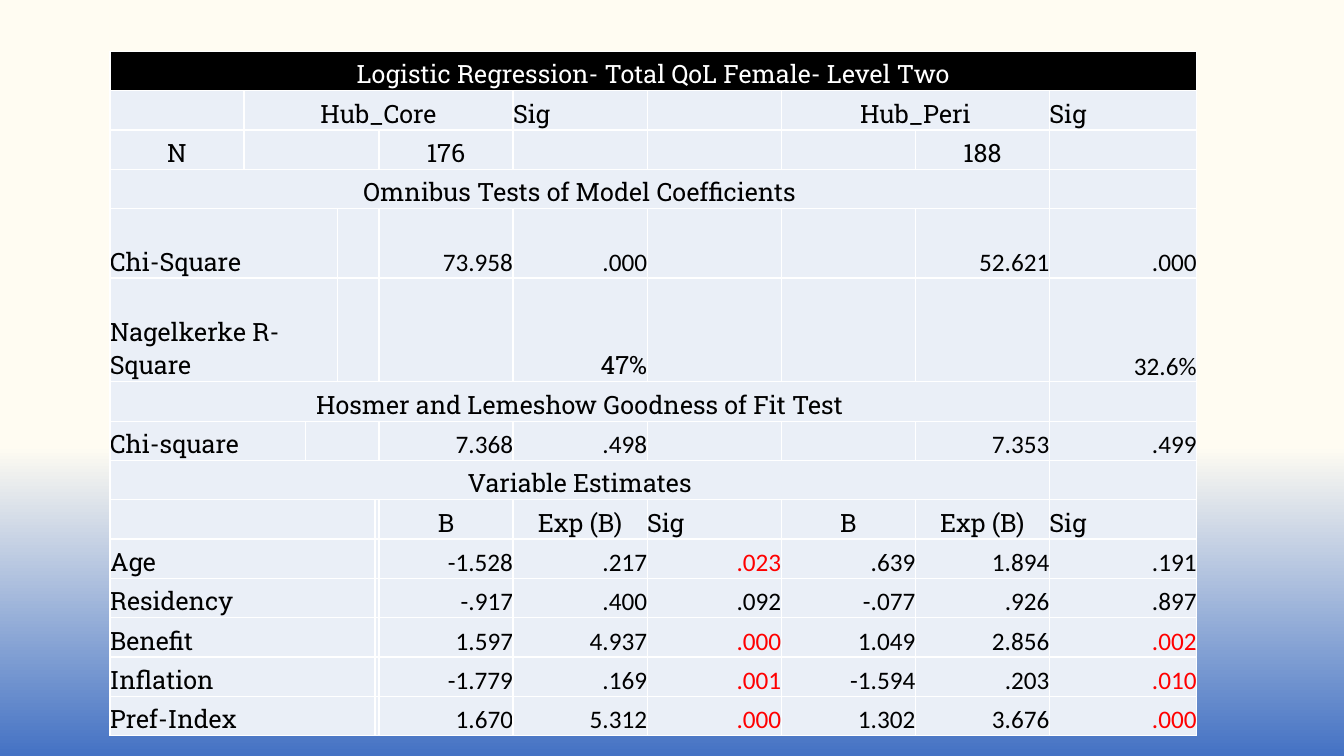
from lxml.etree import SubElement
from pptx import Presentation
from pptx.dml.color import RGBColor
from pptx.enum.text import MSO_ANCHOR, PP_ALIGN
from pptx.oxml.ns import qn
from pptx.util import Inches, Pt

TEXT_FONT, NUMBER_FONT = "Roboto Slab", "Calibri"
BLACK, WHITE, RED, PALE_BLUE = "000000", "FFFFFF", "FF0000", "EAEFF7"
NO_STYLE = "{2D5ABB26-0587-4C30-8999-92F81FD0307C}"
ALIGNMENTS = {"l": PP_ALIGN.LEFT, "c": PP_ALIGN.CENTER, "r": PP_ALIGN.RIGHT}

COLUMN_WIDTHS = [1.33, 0.61, 0.32, 0.37, 0.03] + [1.33] * 5 + [1.46]
ROW_HEIGHTS = [0.39] * 4 + [0.69, 1.03] + [0.39] * 9
SIGNIFICANCE_COLUMNS = (7, 10)

SECTION = (10, 1)
MODEL = (3, 2) + (1,) * 6
ESTIMATE = (4,) + (1,) * 7

SUMMARY_ROWS = [
    ((11,), "c", ["Logistic Regression- Total QoL Female- Level Two"]),
    ((1, 5, 1, 1, 2, 1), "lcllcl", ["", "Hub_Core", "Sig", "", "Hub_Peri", "Sig"]),
    ((1, 4) + (1,) * 6, "clclllcl", ["N", "", "176", "", "", "", "188", ""]),
    (SECTION, "cl", ["Omnibus Tests of Model Coefficients", ""]),
    (MODEL, "llrrllrr", ["Chi-Square", "", "73.958", ".000", "", "", "52.621", ".000"]),
    (MODEL, "lllrlllr", ["Nagelkerke R-Square", "", "", "47%", "", "", "", "32.6%"]),
    (SECTION, "cl", ["Hosmer and Lemeshow Goodness of Fit Test", ""]),
    ((2, 3) + (1,) * 6, "llrrllrr", ["Chi-square", "", "7.368", ".498", "", "", "7.353", ".499"]),
    (SECTION, "cl", ["Variable Estimates", ""]),
    (ESTIMATE, "llcclccl", ["", "", "B", "Exp (B)", "Sig", "B", "Exp (B)", "Sig"]),
]
ESTIMATES = {
    "Age": ["-1.528", ".217", ".023", ".639", "1.894", ".191"],
    "Residency": ["-.917", ".400", ".092", "-.077", ".926", ".897"],
    "Benefit": ["1.597", "4.937", ".000", "1.049", "2.856", ".002"],
    "Inflation": ["-1.779", ".169", ".001", "-1.594", ".203", ".010"],
    "Pref-Index": ["1.670", "5.312", ".000", "1.302", "3.676", ".000"],
}


def color(value):
    return RGBColor.from_string(value)


class RegressionPage:
    """Holds the table style and the current slide."""

    def __init__(self, deck, size=18, border_color=WHITE, border_width=1):
        self.page = deck.slides.add_slide(deck.slide_layouts[6])
        self.size = size
        self.border_color = border_color
        self.border_width = border_width

    def background(self, stops, angle):
        fill = self.page.background.fill
        fill.gradient()
        fill.gradient_angle = angle
        for stop, (position, value) in zip(fill.gradient_stops, stops):
            stop.position = position
            stop.color.rgb = color(value)

    def table(self, left, top, widths, heights):
        frame = self.page.shapes.add_table(
            len(heights), len(widths), Inches(left), Inches(top),
            Inches(sum(widths)), Inches(sum(heights)))
        table = frame.table
        table.first_row = table.horz_banding = False
        table._tbl.tblPr.find(qn("a:tableStyleId")).text = NO_STYLE
        for column, width in zip(table.columns, widths):
            column.width = Inches(width)
        for row, height in zip(table.rows, heights):
            row.height = Inches(height)
        return table

    def cell(self, cell, fill):
        cell.margin_left = cell.margin_right = cell.margin_top = cell.margin_bottom = 0
        cell.vertical_anchor = MSO_ANCHOR.BOTTOM
        properties = cell._tc.get_or_add_tcPr()
        for side in ("a:lnL", "a:lnR", "a:lnT", "a:lnB"):
            line = SubElement(properties, qn(side), w=str(Pt(self.border_width)))
            solid = SubElement(line, qn("a:solidFill"))
            SubElement(solid, qn("a:srgbClr"), val=self.border_color)
        cell.fill.solid()
        cell.fill.fore_color.rgb = color(fill)

    def text(self, cell, text, alignment, font, value):
        para = cell.text_frame.paragraphs[0]
        para.alignment = ALIGNMENTS[alignment]
        para.font.size = Pt(self.size)
        para.font.name = font
        para.font.color.rgb = color(value)
        if text:
            para.add_run().text = text

    def row(self, table, index, spans, alignments, texts):
        is_title = index == 0
        for cell in table.rows[index].cells:
            self.cell(cell, BLACK if is_title else PALE_BLUE)
        column = 0
        for span, alignment, text in zip(spans, alignments, texts):
            cell = table.cell(index, column)
            if span > 1:
                cell.merge(table.cell(index, column + span - 1))
            is_estimate = index >= len(SUMMARY_ROWS)
            is_significant = (is_estimate and column in SIGNIFICANCE_COLUMNS
                              and float(text) < 0.05)
            text_color = WHITE if is_title else RED if is_significant else BLACK
            is_number = alignment == "r" and text != "47%"
            self.text(cell, text, alignment, NUMBER_FONT if is_number else TEXT_FONT, text_color)
            column += span


def main():
    deck = Presentation()
    deck.slide_width, deck.slide_height = Inches(13.33), Inches(7.5)
    page = RegressionPage(deck)
    page.background([(0.59, "FFFCF2"), (1, "4472C4")], 270)
    table = page.table(1.09, 0.51, COLUMN_WIDTHS, ROW_HEIGHTS)
    estimate_rows = [(ESTIMATE, "ll" + "r" * 6, [name, "", *values])
                     for name, values in ESTIMATES.items()]
    for index, row in enumerate(SUMMARY_ROWS + estimate_rows):
        page.row(table, index, *row)
    deck.save("out.pptx")


if __name__ == "__main__":
    main()
